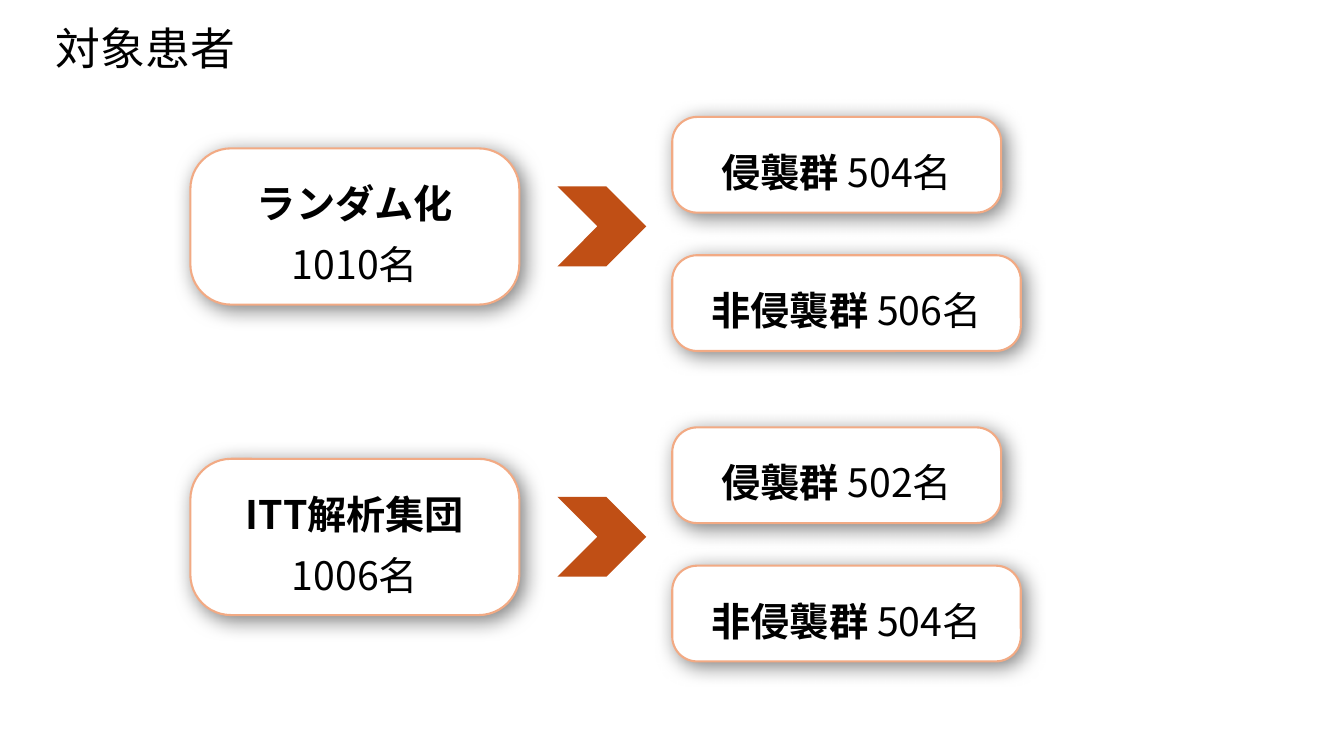
"""Build the slide showing the patient groups of the trial."""
from lxml.etree import SubElement
from pptx import Presentation
from pptx.dml.color import RGBColor
from pptx.enum.shapes import MSO_SHAPE as Shape
from pptx.enum.text import MSO_ANCHOR as Anchor, MSO_AUTO_SIZE as AutoSize, PP_ALIGN as Align
from pptx.oxml.ns import qn
from pptx.util import Pt

FONT = "Noto Sans CJK JP"
COLORS = {"text": "000000", "box": "FFFFFF", "border": "F2AA84",
          "arrow": "C04F15", "shadow": "000000"}
ROW_TOP, ROW_PITCH = 83.5, 221.75
POPULATIONS = [
    ("ランダム化", "1010名", "504名", "506名"),
    ("ITT解析集団", "1006名", "502名", "504名"),
]


def color(name):
    return RGBColor.from_string(COLORS[name])


def style_run(run, size, bold=False):
    run.font.size = Pt(size)
    run.font.bold = bold
    run.font.name = FONT
    run.font.color.rgb = color("text")
    SubElement(run.font._element, qn("a:ea"), typeface=FONT)


def add_title(slide, text):
    title = slide.shapes.title
    title.left, title.top, title.width, title.height = Pt(0), Pt(0), Pt(960), Pt(68.4)
    frame = title.text_frame
    frame.text = text
    frame.auto_size = AutoSize.NONE
    frame.vertical_anchor = Anchor.MIDDLE
    frame.margin_left = Pt(40)
    heading = frame.paragraphs[0]
    heading.alignment = Align.LEFT
    style_run(heading.runs[0], 32)


def add_shadow(box):
    box.shadow.inherit = False
    effects = box._element.spPr.find(qn("a:effectLst"))
    shadow = SubElement(effects, qn("a:outerShdw"), blurRad=str(Pt(15)), dist=str(Pt(4)),
                        dir=str(45 * 60000), algn="ctr", rotWithShape="0")
    tint = SubElement(shadow, qn("a:srgbClr"), val=COLORS["shadow"])
    SubElement(tint, qn("a:alpha"), val="50000")


def add_box(slide, left, top, width, height, lines):
    """Add a rounded box; each line is a list of (text, bold) pairs."""
    box = slide.shapes.add_shape(Shape.ROUNDED_RECTANGLE, Pt(left), Pt(top), Pt(width), Pt(height))
    box.adjustments[0] = 0.26
    box.fill.solid()
    box.fill.fore_color.rgb = color("box")
    box.line.color.rgb = color("border")
    box.line.width = Pt(1.5)
    add_shadow(box)
    frame = box.text_frame
    frame.vertical_anchor = Anchor.MIDDLE
    for number, line in enumerate(lines):
        paragraph = frame.add_paragraph() if number else frame.paragraphs[0]
        paragraph.alignment = Align.CENTER
        paragraph.line_spacing = 1.3
        for text, bold in line:
            run = paragraph.add_run()
            run.text = text
            style_run(run, 28, bold)


def add_arrow(slide, left, top):
    arrow = slide.shapes.add_shape(Shape.CHEVRON, Pt(left), Pt(top), Pt(63.4), Pt(57))
    arrow.fill.solid()
    arrow.fill.fore_color.rgb = color("arrow")
    arrow.line.fill.background()
    arrow.shadow.inherit = False


def add_population(slide, top, name, total, invasive, conservative):
    add_box(slide, 136, top + 22.5, 235, 111.6, [[(name, True)], [(total, False)]])
    add_arrow(slide, 398.2, top + 49.7)
    add_box(slide, 480.2, top, 235, 68.4, [[("侵襲群 ", True), (invasive, False)]])
    add_box(slide, 480.2, top + 98.8, 249, 68.4, [[("非侵襲群 ", True), (conservative, False)]])


def main():
    deck = Presentation()
    deck.slide_width, deck.slide_height = Pt(960), Pt(540)
    slide = deck.slides.add_slide(deck.slide_layouts[5])
    add_title(slide, "対象患者")
    for row, population in enumerate(POPULATIONS):
        add_population(slide, ROW_TOP + row * ROW_PITCH, *population)
    deck.save("out.pptx")


if __name__ == "__main__":
    main()
